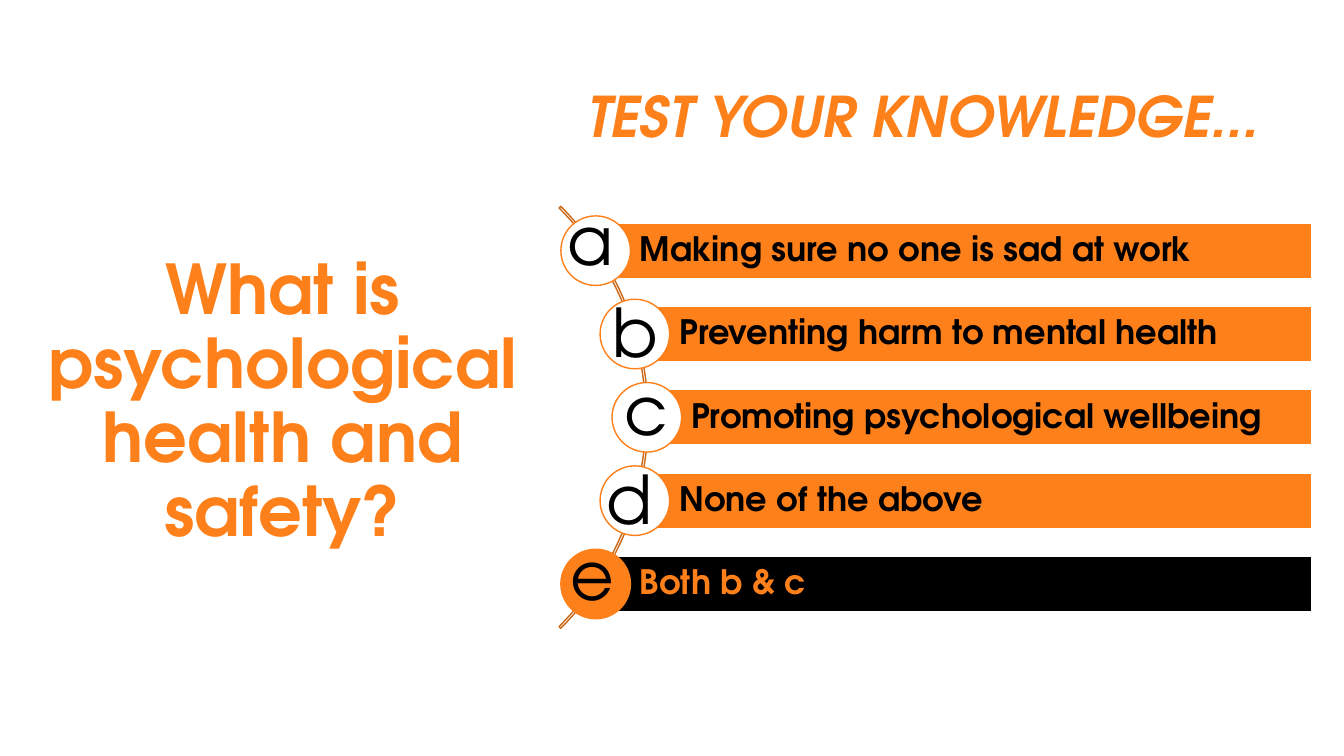
from dataclasses import dataclass
from math import sqrt

from lxml import etree
from pptx import Presentation
from pptx.dml.color import RGBColor
from pptx.enum.shapes import MSO_SHAPE
from pptx.enum.text import MSO_ANCHOR, MSO_AUTO_SIZE, PP_ALIGN
from pptx.oxml.ns import qn
from pptx.shapes.autoshape import Shape
from pptx.slide import Slide
from pptx.text.text import TextFrame
from pptx.util import Inches, Pt

LEFT, CENTER, RIGHT = PP_ALIGN.LEFT, PP_ALIGN.CENTER, PP_ALIGN.RIGHT
TOP, MIDDLE = MSO_ANCHOR.TOP, MSO_ANCHOR.MIDDLE
FIXED, GROW = MSO_AUTO_SIZE.NONE, MSO_AUTO_SIZE.SHAPE_TO_FIT_TEXT
RECTANGLE, OVAL, ARC = MSO_SHAPE.RECTANGLE, MSO_SHAPE.OVAL, MSO_SHAPE.BLOCK_ARC

# The page is a square grid of 40 columns by 22.5 rows.
COLUMNS, ROWS = 40, 22.5
UNIT = Inches(1) / 3

# Answers hang on a circular track, one every ROW_STEP rows.
TRACK_X, TRACK_Y = 10.41, 12.42
TRACK_SIZE, DISC_TRACK_RADIUS = 17.76, 8.84
ROW_STEP = 2.48
BAR_HEIGHT, BAR_RIGHT, BAR_INSET = 1.65, 39.05, 1.32
DISC_SIZE = 2.07
LETTER_WIDTH, LETTER_HEIGHT = 1.98, 2.73


@dataclass(frozen=True)
class Theme:
    font: str = "TeX Gyre Adventor"
    orange: RGBColor = RGBColor(0xFE, 0x80, 0x1A)
    rust: RGBColor = RGBColor(0xCB, 0x67, 0x15)
    black: RGBColor = RGBColor(0, 0, 0)
    white: RGBColor = RGBColor(0xFF, 0xFF, 0xFF)
    title_size: int = 40
    question_size: int = 49
    answer_size: int = 24
    letter_size: int = 48


THEME = Theme()


@dataclass(frozen=True)
class Area:
    """A rectangle in grid units."""
    left: float
    top: float
    width: float
    height: float

    def lengths(self) -> list[int]:
        return [grid(n) for n in (self.left, self.top, self.width, self.height)]


@dataclass(frozen=True)
class Answer:
    letter: str
    text: str
    letter_x: float
    letter_top: float
    bar_color: RGBColor = THEME.orange
    text_color: RGBColor = THEME.black
    disc_color: RGBColor = THEME.white


ANSWERS = [
    Answer("a", "Making sure no one is sad at work", 17.58, 5.76),
    Answer("b", "Preventing harm to mental health", 18.9, 8.49),
    Answer("c", "Promoting psychological wellbeing", 19.22, 10.8),
    Answer("d", "None of the above", 18.75, 13.47),
    Answer("e", "Both b & c", 17.64, 15.72, THEME.black, THEME.orange, THEME.orange),
]


def grid(units: float) -> int:
    return round(units * UNIT)


def write(frame: TextFrame, text: str, size: int, color: RGBColor, align: PP_ALIGN,
          bold: bool = True, italic: bool = False, spacing: float = 0.9) -> None:
    """Fill a frame with one unbulleted paragraph."""
    para = frame.paragraphs[0]
    para.text = text
    properties = para._p.get_or_add_pPr()
    properties.set("marL", "0")
    properties.set("indent", "0")
    etree.SubElement(properties, qn("a:buNone"))
    para.alignment = align
    para.line_spacing = spacing
    para.space_before = Pt(0)
    font = para.font
    font.name, font.size = THEME.font, Pt(size)
    font.bold, font.italic = bold, italic
    font.color.rgb = color


def place(box: Shape, area: Area, anchor: MSO_ANCHOR) -> TextFrame:
    """Move a placeholder and return its text frame."""
    box.left, box.top, box.width, box.height = area.lengths()
    frame = box.text_frame
    frame.word_wrap, frame.auto_size = True, FIXED
    frame.vertical_anchor = anchor
    return frame


def add_figure(page: Slide, kind: MSO_SHAPE, area: Area, line: RGBColor,
               fill: RGBColor | None = None) -> Shape:
    figure = page.shapes.add_shape(kind, *area.lengths())
    figure.shadow.inherit = False
    if fill is None:
        figure.fill.background()
    else:
        figure.fill.solid()
        figure.fill.fore_color.rgb = fill
    figure.line.color.rgb = line
    figure.line.width = Pt(1)
    return figure


def add_track(page: Slide) -> None:
    radius = TRACK_SIZE / 2
    area = Area(TRACK_X - radius, TRACK_Y - radius, TRACK_SIZE, TRACK_SIZE)
    track = add_figure(page, ARC, area, THEME.rust)
    for index, value in enumerate((189, 27, 0.004)):
        track.adjustments[index] = value


def add_answer(page: Slide, answer: Answer, step: int) -> None:
    """Draw a bar and disc, step rows away from the middle of the track."""
    offset = step * ROW_STEP
    x = TRACK_X + sqrt(DISC_TRACK_RADIUS ** 2 - offset ** 2)
    y = TRACK_Y + offset
    bar_area = Area(x, y - BAR_HEIGHT / 2, BAR_RIGHT - x, BAR_HEIGHT)
    bar = add_figure(page, RECTANGLE, bar_area, THEME.white, answer.bar_color)
    frame = bar.text_frame
    frame.word_wrap, frame.vertical_anchor = True, MIDDLE
    frame.margin_left = grid(BAR_INSET)
    frame.margin_top = frame.margin_right = frame.margin_bottom = Inches(0.07)
    write(frame, answer.text, THEME.answer_size, answer.text_color, LEFT)
    disc_area = Area(x - DISC_SIZE / 2, y - DISC_SIZE / 2, DISC_SIZE, DISC_SIZE)
    add_figure(page, OVAL, disc_area, THEME.orange, answer.disc_color)


def add_letter(page: Slide, answer: Answer) -> None:
    area = Area(answer.letter_x - LETTER_WIDTH / 2, answer.letter_top,
                LETTER_WIDTH, LETTER_HEIGHT)
    frame = page.shapes.add_textbox(*area.lengths()).text_frame
    frame.word_wrap, frame.auto_size = False, GROW
    write(frame, answer.letter, THEME.letter_size, THEME.black, CENTER,
          bold=False, spacing=1.0)


def main() -> None:
    deck = Presentation()
    deck.slide_width, deck.slide_height = grid(COLUMNS), grid(ROWS)
    page = deck.slides.add_slide(deck.slide_layouts[1])

    title = place(page.shapes.title, Area(9.51, 1.44, 28.26, 4.23), MIDDLE)
    write(title, "TEST YOUR KNOWLEDGE...", THEME.title_size, THEME.orange, RIGHT,
          italic=True)
    question = place(page.placeholders[1], Area(0.96, 7.44, 14.91, 10.95), TOP)
    write(question, "What is psychological health and safety?",
          THEME.question_size, THEME.orange, CENTER)

    add_track(page)
    for index, answer in enumerate(ANSWERS):
        add_answer(page, answer, index - len(ANSWERS) // 2)
    for answer in ANSWERS:
        add_letter(page, answer)

    deck.save("out.pptx")


if __name__ == "__main__":
    main()
